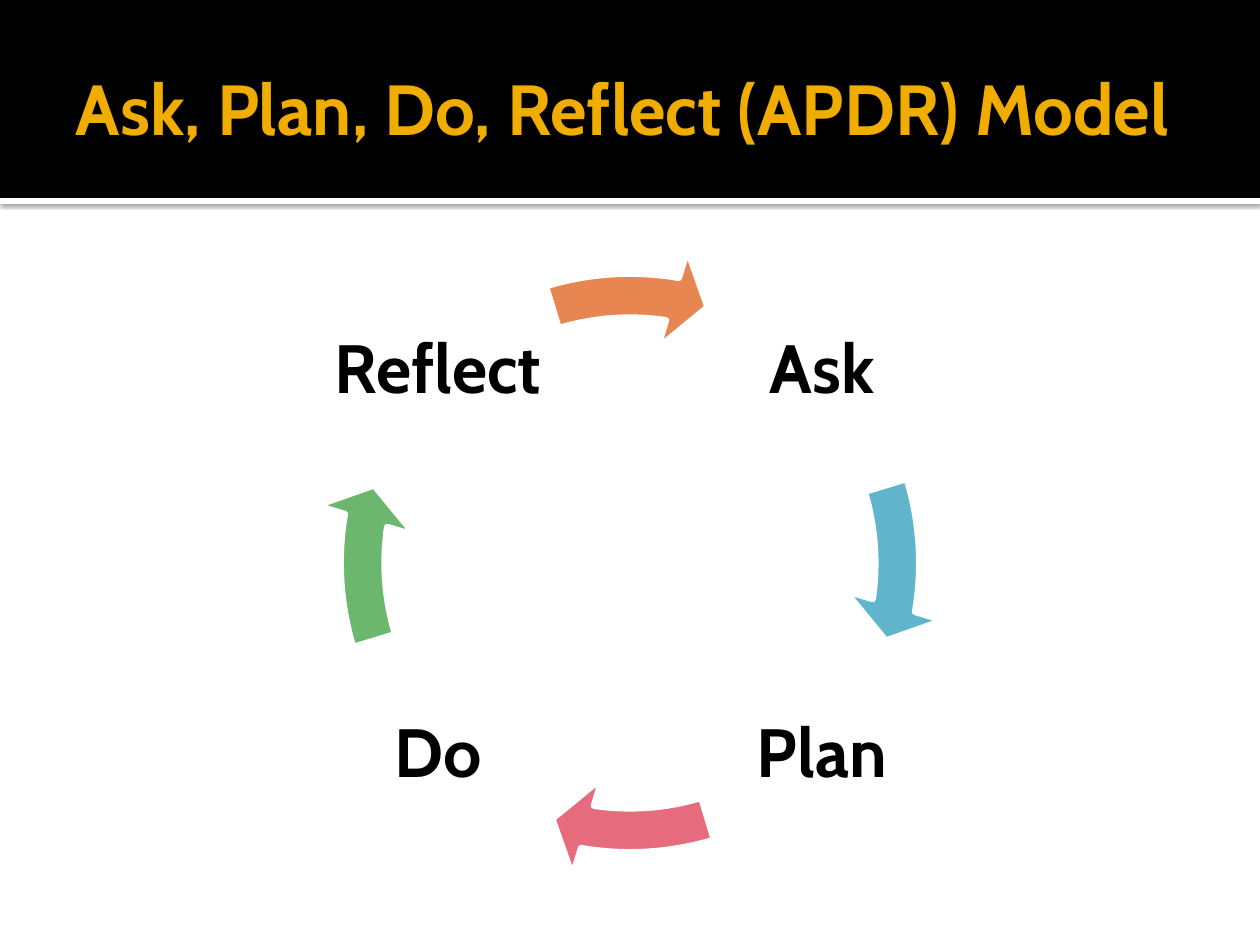
from dataclasses import dataclass

from lxml import etree
from pptx import Presentation
from pptx.dml.color import RGBColor
from pptx.enum.shapes import MSO_SHAPE
from pptx.enum.text import MSO_ANCHOR, PP_ALIGN
from pptx.oxml.ns import qn
from pptx.util import Emu, Pt

RECTANGLE = MSO_SHAPE.RECTANGLE
CIRCULAR_ARROW = MSO_SHAPE.CIRCULAR_ARROW
MIDDLE = MSO_ANCHOR.MIDDLE
LEFT, CENTER = PP_ALIGN.LEFT, PP_ALIGN.CENTER

PIXELS_PER_INCH = 126
SLIDE_WIDTH, SLIDE_HEIGHT = 1260, 945
FONT = "Cabin"

BLACK = RGBColor(0x00, 0x00, 0x00)
WHITE = RGBColor(0xFF, 0xFF, 0xFF)
GOLD = RGBColor(0xF0, 0xAD, 0x00)
BLUE = RGBColor(0x60, 0xB5, 0xCC)
PINK = RGBColor(0xE6, 0x6C, 0x7D)
GREEN = RGBColor(0x6B, 0xB7, 0x6D)
ORANGE = RGBColor(0xE8, 0x86, 0x51)

# Cycle geometry; arrow angles are in units of 100000/60000 degree
CYCLE_X, CYCLE_Y = 630, 563
LABEL_OFFSET, LABEL_SIZE = 192, 226
RING_SIZE = 638
FULL_TURN = 216
QUARTER_TURN = FULL_TURN / 4
ARROW_END, ARROW_START = 5.48, 205.86
ARROW_THICKNESS, ARROW_TIP, ARROW_HEAD = 0.069, 4.66, 0.081


@dataclass(frozen=True)
class Box:
    left: int
    top: int
    width: int
    height: int

    def emu(self) -> list[Emu]:
        return [px(v) for v in (self.left, self.top, self.width, self.height)]


@dataclass(frozen=True)
class Stage:
    label: str
    column: int
    row: int
    arrow_color: RGBColor


# Clockwise from the top right; each arrow leaves its stage
STAGES = [
    Stage("Ask", 1, -1, BLUE),
    Stage("Plan", 1, 1, PINK),
    Stage("Do", -1, 1, GREEN),
    Stage("Reflect", -1, -1, ORANGE),
]


def px(value: int) -> Emu:
    return Emu(round(value * 914400 / PIXELS_PER_INCH))


def centered_square(x: int, y: int, size: int) -> Box:
    return Box(x - size // 2, y - size // 2, size, size)


def add_text(slide, box: Box, text: str, *, size: float, color: RGBColor,
             align=CENTER, line_spacing: float = 1.0, left_inset: int = 6):
    shape = slide.shapes.add_textbox(*box.emu())
    frame = shape.text_frame
    frame.word_wrap = True
    frame.vertical_anchor = MIDDLE
    frame.margin_left = px(left_inset)
    frame.margin_top = frame.margin_right = frame.margin_bottom = px(6)
    paragraph = frame.paragraphs[0]
    paragraph.alignment = align
    paragraph.line_spacing = line_spacing
    run = paragraph.add_run()
    run.text = text
    run.font.name = FONT
    run.font.size = Pt(size)
    run.font.bold = True
    run.font.color.rgb = color
    return shape


def add_filled_shape(slide, kind, box: Box, color: RGBColor):
    shape = slide.shapes.add_shape(kind, *box.emu())
    shape.fill.solid()
    shape.fill.fore_color.rgb = color
    shape.line.fill.background()
    shape.shadow.inherit = False
    return shape


def add_drop_shadow(shape) -> None:
    effects = shape._element.spPr.find(qn("a:effectLst"))
    shadow = etree.SubElement(
        effects, qn("a:outerShdw"), blurRad=str(Pt(2.5)), dist=str(Pt(0.8)),
        dir="5400000", algn="t", rotWithShape="0")
    color = etree.SubElement(shadow, qn("a:srgbClr"), val=str(BLACK))
    etree.SubElement(color, qn("a:alpha"), val="60000")


def add_stage(slide, index: int, stage: Stage) -> None:
    label_box = centered_square(CYCLE_X + stage.column * LABEL_OFFSET,
                                CYCLE_Y + stage.row * LABEL_OFFSET, LABEL_SIZE)
    add_text(slide, label_box, stage.label, size=39, color=BLACK, line_spacing=0.9)

    ring_box = centered_square(CYCLE_X, CYCLE_Y, RING_SIZE)
    arrow = add_filled_shape(slide, CIRCULAR_ARROW, ring_box, stage.arrow_color)
    arrow.line.color.rgb = WHITE
    arrow.line.width = Pt(3.78)
    turn = index * QUARTER_TURN
    adjustments = (ARROW_THICKNESS, ARROW_TIP, ARROW_END + turn,
                   (ARROW_START + turn) % FULL_TURN, ARROW_HEAD)
    for position, value in enumerate(adjustments):
        arrow.adjustments[position] = value


def main() -> None:
    presentation = Presentation()
    presentation.slide_width = px(SLIDE_WIDTH)
    presentation.slide_height = px(SLIDE_HEIGHT)
    slide = presentation.slides.add_slide(presentation.slide_layouts[6])

    # Header band with its shadowed rule
    rule = add_filled_shape(slide, RECTANGLE, Box(0, 198, SLIDE_WIDTH, 6), WHITE)
    add_drop_shadow(rule)
    add_filled_shape(slide, RECTANGLE, Box(0, 0, SLIDE_WIDTH, 198), BLACK)
    add_text(slide, Box(63, 21, 1134, 173), "Ask, Plan, Do, Reflect (APDR) Model",
             size=40.5, color=GOLD, align=LEFT, left_inset=13)

    # Cycle of stages
    for index, stage in enumerate(STAGES):
        add_stage(slide, index, stage)

    presentation.save("out.pptx")


if __name__ == "__main__":
    main()
